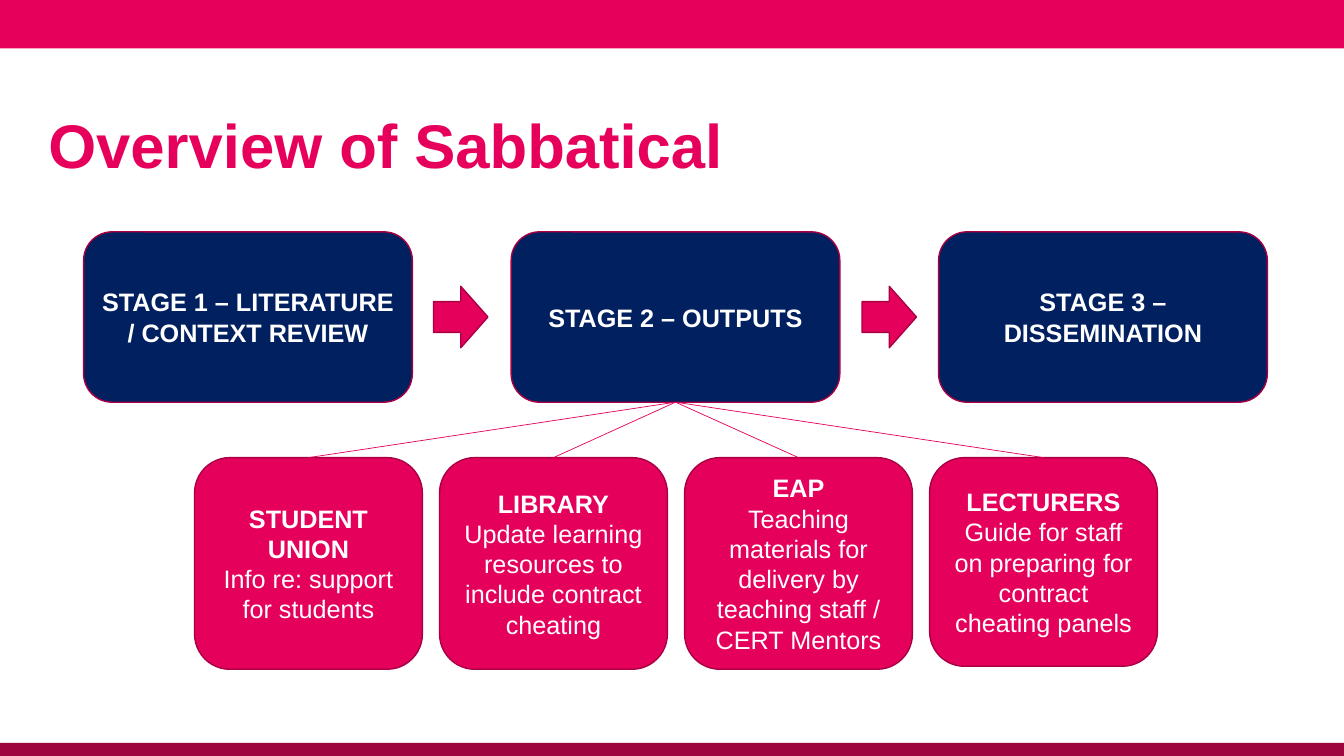
"""Build the sabbatical overview slide: three stages and the four outputs of stage 2."""
import pptx
import pptx.util
import pptx.dml.color
import pptx.enum.shapes
import pptx.enum.text
import pptx.oxml.ns
import lxml.etree

Inches, Pt = pptx.util.Inches, pptx.util.Pt
RGB = pptx.dml.color.RGBColor.from_string
SHAPE = pptx.enum.shapes.MSO_SHAPE
ALIGN = pptx.enum.text.PP_ALIGN
COLORS = {"banner": "E6005B", "footer": "9E043D", "pink": "E5005B",
          "navy": "002060", "edge": "A90043", "white": "FFFFFF"}


def add_text(sp, lines, size=18, color="white", align=ALIGN.CENTER):
    """Fill a shape with paragraphs, the first of them bold."""
    tf = sp.text_frame
    tf.word_wrap = True
    tf.vertical_anchor = pptx.enum.text.MSO_ANCHOR.MIDDLE
    for i, line in enumerate(lines):
        p = tf.paragraphs[0] if i == 0 else tf.add_paragraph()
        p.alignment = align
        r = p.add_run()
        r.text = line
        r.font.name = "Arial"
        r.font.size = Pt(size)
        r.font.bold = i == 0
        r.font.color.rgb = RGB(COLORS[color])


def add_box(kind, x, y, w, h, fill, edge=None):
    """Add a flat filled shape, outlined when an edge colour is given."""
    sp = s.shapes.add_shape(kind, Inches(x), Inches(y), Inches(w), Inches(h))
    sp.shadow.inherit = False
    sp.fill.solid()
    sp.fill.fore_color.rgb = RGB(COLORS[fill])
    if edge:
        sp.line.color.rgb = RGB(COLORS[edge])
        sp.line.width = Pt(1)
    else:
        sp.line.fill.background()
    return sp


prs = pptx.Presentation()
prs.slide_width, prs.slide_height = Inches(13.33), Inches(7.5)
s = prs.slides.add_slide(prs.slide_layouts[6])

add_box(SHAPE.RECTANGLE, 0, 0, 13.33, 0.48, "banner")
add_box(SHAPE.RECTANGLE, 0, 7.37, 13.33, 0.13, "footer")

title = s.shapes.add_textbox(Inches(0.48), Inches(0.88), Inches(12.36), Inches(1.1))
title.text_frame.margin_left = 0
add_text(title, ["Overview of Sabbatical"], size=44, color="banner", align=ALIGN.LEFT)

stages = []
for i, name in enumerate(["STAGE 1 – LITERATURE / CONTEXT REVIEW",
                          "STAGE 2 – OUTPUTS", "STAGE 3 – DISSEMINATION"]):
    sp = add_box(SHAPE.ROUNDED_RECTANGLE, 0.83 + 4.24 * i, 2.3, 3.26, 1.69, "navy", "edge")
    add_text(sp, [name])
    stages.append(sp)

for x in (4.3, 8.55):
    add_box(SHAPE.RIGHT_ARROW, x, 2.84, 0.54, 0.61, "pink", "edge")

outputs = [
    ("STUDENT UNION", "Info re: support for students", 2.1),
    ("LIBRARY", "Update learning resources to include contract cheating", 2.1),
    ("EAP", "Teaching materials for delivery by teaching staff / CERT Mentors", 2.1),
    ("LECTURERS", "Guide for staff on preparing for contract cheating panels", 2.07),
]
for i, (name, detail, height) in enumerate(outputs):
    sp = add_box(SHAPE.ROUNDED_RECTANGLE, 1.93 + 2.43 * i, 4.54, 2.26, height, "pink", "edge")
    add_text(sp, [name, detail])
    link = s.shapes.add_connector(pptx.enum.shapes.MSO_CONNECTOR.STRAIGHT, 0, 0, 0, 0)
    link.begin_connect(stages[1], 2)
    link.end_connect(sp, 0)
    link.line.color.rgb = RGB(COLORS["pink"])
    link.line.width = Pt(0.5)
    lxml.etree.SubElement(link._element.spPr, pptx.oxml.ns.qn("a:effectLst"))

prs.save("out.pptx")
